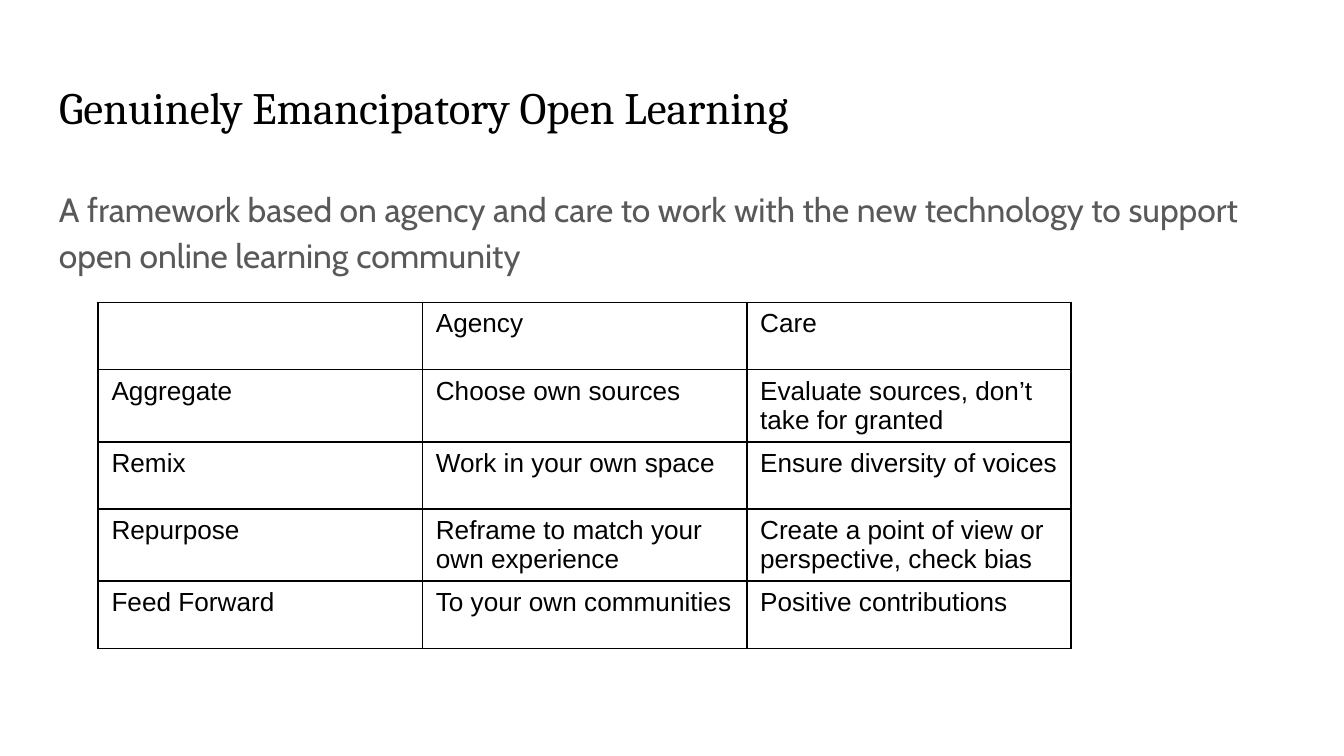
import pptx
import pptx.dml.color
import pptx.enum.text
import pptx.oxml
import pptx.oxml.ns
import pptx.util

Inches = pptx.util.Inches
COLORS = {"ink": "000000", "muted": "595959", "paper": "FFFFFF"}
FORMATS = {
    "title": {"name": "Cambria", "size": pptx.util.Pt(24), "bold": False},
    "summary": {"name": "Cabin", "size": pptx.util.Pt(18)},
    "cell": {"name": "Arial", "size": pptx.util.Pt(14), "bold": False},
}
FRAME = {
    "word_wrap": True,
    "auto_size": pptx.enum.text.MSO_AUTO_SIZE.NONE,
    "vertical_anchor": pptx.enum.text.MSO_ANCHOR.TOP,
    "margin_left": Inches(0.1),
    "margin_top": Inches(0.1),
    "margin_right": Inches(0.1),
    "margin_bottom": Inches(0.1),
}
FRAMEWORK = [
    ["", "Agency", "Care"],
    ["Aggregate", "Choose own sources", "Evaluate sources, don’t take for granted"],
    ["Remix", "Work in your own space", "Ensure diversity of voices"],
    ["Repurpose", "Reframe to match your own experience",
     "Create a point of view or perspective, check bias"],
    ["Feed Forward", "To your own communities", "Positive contributions"],
]


def apply(target, values):
    for key, value in values.items():
        setattr(target, key, value)


def write(frame, text, style, color):
    frame.text = text
    paragraph = frame.paragraphs[0]
    paragraph.alignment = pptx.enum.text.PP_ALIGN.LEFT
    for part in (paragraph, *paragraph.runs):
        apply(part.font, FORMATS[style])
        part.font.color.rgb = pptx.dml.color.RGBColor.from_string(COLORS[color])
    return paragraph


def add_title(slide, left, top, width, height):
    title = slide.shapes.title
    apply(title, {"left": Inches(left), "top": Inches(top),
                  "width": Inches(width), "height": Inches(height)})
    apply(title.text_frame, FRAME)
    write(title.text_frame, "Genuinely Emancipatory Open Learning", "title", "ink")


def add_summary(slide, left, top, width, height):
    summary = slide.shapes.add_textbox(*map(Inches, (left, top, width, height)))
    apply(summary.text_frame, FRAME)
    paragraph = write(
        summary.text_frame,
        "A framework based on agency and care to work with the new technology "
        "to support open online learning community",
        "summary", "muted")
    paragraph.line_spacing = 1.15


def add_borders(cell):
    properties = cell._tc.get_or_add_tcPr()
    for position, side in enumerate(("lnL", "lnR", "lnT", "lnB")):
        border = pptx.oxml.parse_xml(
            f'<a:{side} {pptx.oxml.ns.nsdecls("a")} w="{pptx.util.Pt(1)}">'
            f'<a:solidFill><a:srgbClr val="{COLORS["ink"]}"/></a:solidFill></a:{side}>')
        properties.insert(position, border)


def add_framework(slide, left, top, width, height):
    rows, columns = len(FRAMEWORK), len(FRAMEWORK[0])
    table = slide.shapes.add_table(
        rows, columns, *map(Inches, (left, top, width, height))).table
    apply(table, {"first_row": False, "horz_banding": False})
    for r, entries in enumerate(FRAMEWORK):
        for c, entry in enumerate(entries):
            cell = table.cell(r, c)
            cell.fill.background()
            write(cell.text_frame, entry, "cell", "ink")
            add_borders(cell)


def main():
    deck = pptx.Presentation()
    deck.slide_width = Inches(10)
    deck.slide_height = deck.slide_width * 9 // 16
    slide = deck.slides.add_slide(deck.slide_layouts.get_by_name("Title Only"))
    slide.background.fill.solid()
    slide.background.fill.fore_color.rgb = pptx.dml.color.RGBColor.from_string(COLORS["paper"])
    add_title(slide, 0.34, 0.49, 9.32, 0.63)
    add_summary(slide, 0.34, 1.26, 9.32, 3.74)
    add_framework(slide, 0.73, 2.25, 7.24, 2.5)
    deck.save("out.pptx")


if __name__ == "__main__":
    main()
